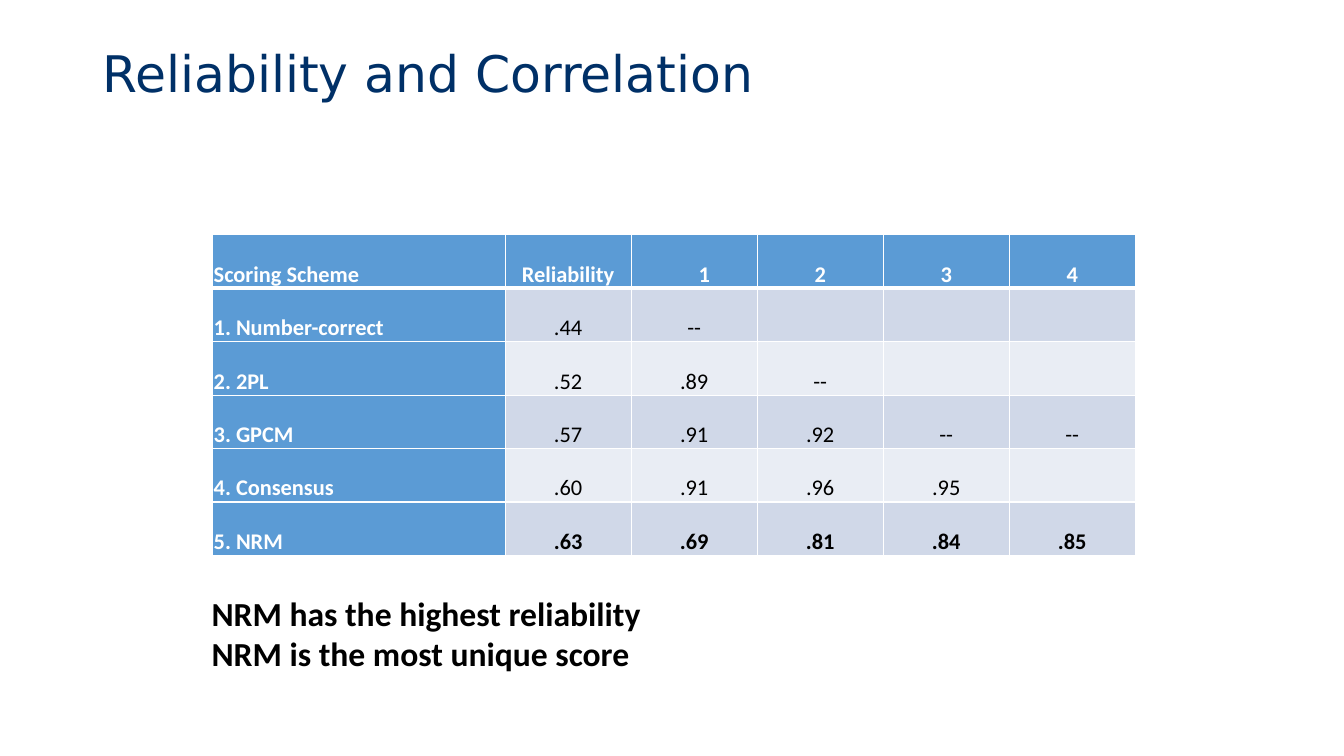
from lxml import etree
from pptx import Presentation
from pptx.dml.color import RGBColor
from pptx.enum.text import MSO_ANCHOR, PP_ALIGN
from pptx.oxml.ns import qn
from pptx.util import Inches, Pt

LEFT, CENTER = PP_ALIGN.LEFT, PP_ALIGN.CENTER
TOP, MIDDLE, BOTTOM = MSO_ANCHOR.TOP, MSO_ANCHOR.MIDDLE, MSO_ANCHOR.BOTTOM

COLORS = {
    "navy": "003067",
    "head": "5B9BD5",
    "dark": "D0D8E8",
    "light": "E9EDF4",
    "white": "FFFFFF",
    "black": "000000",
}

SCORES = [
    ["Scoring Scheme", "Reliability", "1", "2", "3", "4"],
    ["1. Number-correct", ".44", "--", "", "", ""],
    ["2. 2PL", ".52", ".89", "--", "", ""],
    ["3. GPCM", ".57", ".91", ".92", "--", "--"],
    ["4. Consensus", ".60", ".91", ".96", ".95", ""],
    ["5. NRM", ".63", ".69", ".81", ".84", ".85"],
]
WIDTHS = [2.9] + [1.25] * 5
ROW = 0.53


def color(name):
    return RGBColor.from_string(COLORS[name])


def write(frame, text, size=16, font="Calibri", ink="black", bold=False,
          align=LEFT, line=None, after=0):
    """Fill a text frame, one paragraph for each line of text."""
    for i, words in enumerate(text.split("\n")):
        para = frame.paragraphs[0] if i == 0 else frame.add_paragraph()
        para.alignment = align
        para.line_spacing = line
        para.space_after = Pt(after)
        para.font.size = Pt(size)
        if words:
            run = para.add_run()
            run.text = words
            run.font.size = Pt(size)
            run.font.name = font
            run.font.bold = bold
            run.font.color.rgb = color(ink)


def border(cell, widths):
    """Draw white borders; widths are points for left, right, top, bottom."""
    props = cell._tc.get_or_add_tcPr()
    for i, (side, width) in enumerate(zip("LRTB", widths)):
        edge = etree.Element(qn(f"a:ln{side}"), w=str(Pt(width)))
        fill = etree.SubElement(edge, qn("a:solidFill"))
        etree.SubElement(fill, qn("a:srgbClr"), val=COLORS["white"])
        props.insert(i, edge)


class Deck:
    def __init__(self):
        self.file = Presentation()
        self.file.slide_width = Inches(13.33)
        self.file.slide_height = Inches(7.5)
        self.slide = self.file.slides.add_slide(self.file.slide_layouts[6])

    def text(self, left, top, width, height, text, anchor=TOP, **style):
        box = self.slide.shapes.add_textbox(
            Inches(left), Inches(top), Inches(width), Inches(height))
        frame = box.text_frame
        frame.word_wrap = True
        frame.vertical_anchor = anchor
        write(frame, text, **style)

    def table(self, left, top, rows):
        table = self.slide.shapes.add_table(
            len(rows), len(WIDTHS), Inches(left), Inches(top),
            Inches(sum(WIDTHS)), Inches(ROW * len(rows))).table
        for col, width in zip(table.columns, WIDTHS):
            col.width = Inches(width)
        for r, row in enumerate(rows):
            table.rows[r].height = Inches(ROW)
            for c, text in enumerate(row):
                self.cell(table.cell(r, c), r, c, text)

    def cell(self, cell, r, c, text):
        head = r == 0 or c == 0
        last = r == len(SCORES) - 1
        inset = Inches(0.01 if c < 2 else 0)
        cell.margin_left = cell.margin_right = cell.margin_top = inset
        cell.margin_bottom = 0
        if (r, c) == (0, 2):
            cell.margin_left = Inches(0.2)
        cell.vertical_anchor = BOTTOM
        cell.fill.solid()
        band = "dark" if r % 2 else "light"
        cell.fill.fore_color.rgb = color("head" if head else band)
        border(cell, [1, 1, 3 if r == 1 else 1, 3 if r == 0 else 1])
        write(cell.text_frame, text, ink="white" if head else "black",
              bold=head or last, align=CENTER if c else LEFT,
              line=1.15, after=10)


def main():
    deck = Deck()
    deck.text(0.92, 0.2, 11.5, 1.12, "Reliability and Correlation",
              anchor=MIDDLE, size=36, font="DejaVu Sans", ink="navy", line=0.9)
    deck.table(2.11, 2.33, SCORES)
    deck.text(2, 5.83, 9.44, 0.91,
              "NRM has the highest reliability\nNRM is the most unique score",
              size=24, bold=True)
    deck.file.save("out.pptx")


if __name__ == "__main__":
    main()
